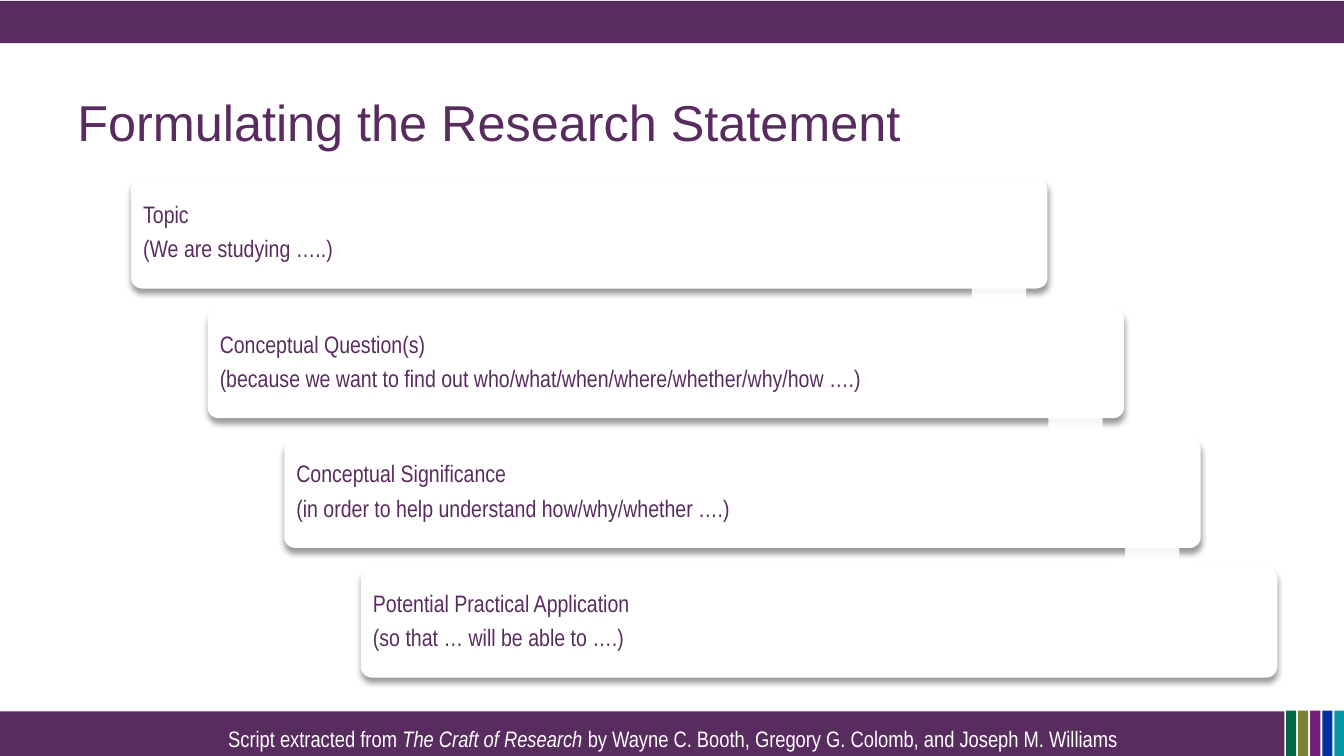
"""Build a slide that steps from a topic to its practical application."""
from dataclasses import dataclass

from lxml.etree import SubElement
from pptx import Presentation
from pptx.dml.color import RGBColor
from pptx.enum.shapes import MSO_SHAPE
from pptx.enum.text import MSO_ANCHOR, PP_ALIGN
from pptx.oxml.ns import qn
from pptx.util import Inches, Pt

WIDTH, HEIGHT = Inches(13.33), Inches(7.5)
COLS, ROWS = 160, 90
HUES = {
    "plum": "592C5F", "white": "FFFFFF", "black": "000000", "green": "006647",
    "olive": "7E8034", "violet": "712177", "blue": "0033A0", "teal": "0996A9",
}
NARROW = "Arial Narrow"


@dataclass(frozen=True)
class Box:
    """Hold a place on the grid, in columns and rows."""
    col: float
    row: float
    wide: float
    high: float

    def shift(self, cols: float, rows: float) -> "Box":
        """Return the same box moved by columns and rows."""
        return Box(self.col + cols, self.row + rows, self.wide, self.high)

    def emu(self) -> tuple[int, int, int, int]:
        """Return left, top, width and height in slide units."""
        cell, line = WIDTH / COLS, HEIGHT / ROWS
        return (round(self.col * cell), round(self.row * line),
                round(self.wide * cell), round(self.high * line))


@dataclass(frozen=True)
class Step:
    """Hold the name and the prompt of one step."""
    name: str
    prompt: str


STEPS = [
    Step("Topic", "(We are studying …..)"),
    Step("Conceptual Question(s)",
         "(because we want to find out who/what/when/where/whether/why/how ….)"),
    Step("Conceptual Significance", "(in order to help understand how/why/whether ….)"),
    Step("Potential Practical Application", "(so that … will be able to ….)"),
]
STRIPES = ["green", "olive", "violet", "blue", "teal"]
CARD = Box(15.6, 21.25, 109.1, 13.1)
LABEL = Box(16.2, 21.6, 87.2, 12.25)
ARROW = Box(113.05, 31.2, 11.75, 8.5)
STRIPE = Box(153.1, 84.6, 1.2, 5.4)
STEP_X, STEP_Y, STRIPE_X = 9.12, 15.44, 1.44


def add_run(para, text: str, size: float, font: str, hue: str, slant: bool = False) -> None:
    """Add one formatted run to a paragraph."""
    run = para.add_run()
    run.text = text
    run.font.size = Pt(size)
    run.font.name = font
    run.font.italic = slant
    run.font.color.rgb = RGBColor.from_string(HUES[hue])


def add_form(slide, kind: MSO_SHAPE, box: Box, hue: str):
    """Add a plain filled shape without line or shadow."""
    form = slide.shapes.add_shape(kind, *box.emu())
    form.shadow.inherit = False
    form.fill.solid()
    form.fill.fore_color.rgb = RGBColor.from_string(HUES[hue])
    form.line.fill.background()
    return form


def add_alpha(node, share: int) -> None:
    """Set the opacity of a colour node in percent."""
    SubElement(node, qn("a:alpha"), val=str(share * 1000))


def add_shade(form) -> None:
    """Give a shape a soft shadow that falls straight down."""
    list_node = form._element.spPr.find(qn("a:effectLst"))
    shade = SubElement(list_node, qn("a:outerShdw"), blurRad=str(Pt(4)),
                       dist=str(Pt(3.4)), dir="5400000", algn="ctr", rotWithShape="0")
    add_alpha(SubElement(shade, qn("a:srgbClr"), val=HUES["black"]), 40)


def add_card(slide, step: Step, rank: int) -> None:
    """Add the card of one step with its label."""
    move = rank * STEP_X, rank * STEP_Y
    card = add_form(slide, MSO_SHAPE.ROUNDED_RECTANGLE, CARD.shift(*move), "white")
    card.adjustments[0] = 0.1
    add_shade(card)
    frame = slide.shapes.add_textbox(*LABEL.shift(*move).emu()).text_frame
    frame.word_wrap = True
    frame.vertical_anchor = MSO_ANCHOR.MIDDLE
    frame.margin_left = frame.margin_right = Inches(0.07)
    frame.margin_top = frame.margin_bottom = Inches(0.07)
    name, prompt = frame.paragraphs[0], frame.add_paragraph()
    prompt.space_before = Pt(6)
    for para, text in ((name, step.name), (prompt, step.prompt)):
        para.line_spacing = 0.9
        add_run(para, text, 17, NARROW, "plum")


def add_arrow(slide, rank: int) -> None:
    """Add the arrow that leads from one card to the next."""
    box = ARROW.shift(rank * STEP_X, rank * STEP_Y)
    arrow = add_form(slide, MSO_SHAPE.DOWN_ARROW, box, "white")
    arrow.adjustments[0], arrow.adjustments[1] = 0.55, 0.45
    add_alpha(arrow._element.spPr.find(".//" + qn("a:srgbClr")), 90)


def add_title(slide) -> None:
    """Place and fill the title."""
    title = slide.shapes.title
    title.left, title.top, title.width, title.height = Box(8, 3.6, 144, 15).emu()
    frame = title.text_frame
    frame.vertical_anchor = MSO_ANCHOR.BOTTOM
    para = frame.paragraphs[0]
    para.alignment = PP_ALIGN.LEFT
    add_run(para, "Formulating the Research Statement", 36, "Arial", "plum")


def add_credit(slide) -> None:
    """Add the line that names the book."""
    frame = slide.shapes.add_textbox(*Box(17, 85.7, 126.25, 7.7).emu()).text_frame
    frame.word_wrap = True
    para = frame.paragraphs[0]
    para.alignment = PP_ALIGN.CENTER
    add_run(para, "Script extracted from ", 16, NARROW, "white")
    add_run(para, "The Craft of Research ", 16, NARROW, "white", True)
    add_run(para, "by Wayne C. Booth, Gregory G. Colomb, and Joseph M. Williams",
            16, NARROW, "white")


def main() -> None:
    """Draw the slide and save it."""
    deck = Presentation()
    deck.slide_width, deck.slide_height = WIDTH, HEIGHT
    slide = deck.slides.add_slide(deck.slide_layouts.get_by_name("Title Only"))
    for band in (Box(0, 84.7, 152.9, 5.3), Box(0, 0.1, 160, 5.05)):
        add_form(slide, MSO_SHAPE.RECTANGLE, band, "plum")
    for rank, hue in enumerate(STRIPES):
        add_form(slide, MSO_SHAPE.RECTANGLE, STRIPE.shift(rank * STRIPE_X, 0), hue)
    add_title(slide)
    for rank, step in enumerate(STEPS):
        add_card(slide, step, rank)
    for rank in range(len(STEPS) - 1):
        add_arrow(slide, rank)
    add_credit(slide)
    deck.save("out.pptx")


if __name__ == "__main__":
    main()
